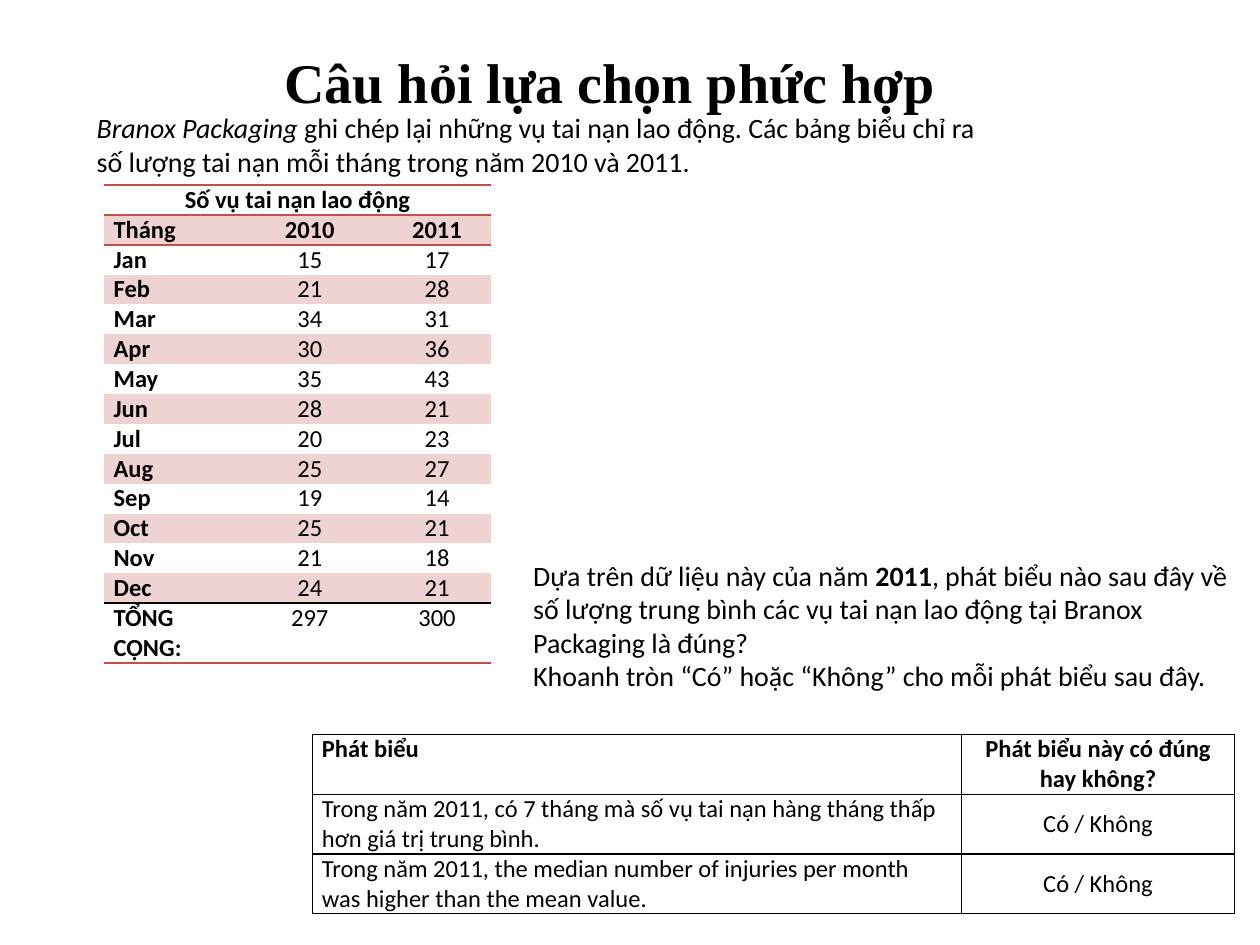
from dataclasses import dataclass
from lxml.etree import SubElement
from pptx import Presentation
from pptx.dml.color import RGBColor
from pptx.enum.text import MSO_ANCHOR, MSO_AUTO_SIZE, PP_ALIGN
from pptx.oxml.ns import qn
from pptx.util import Cm, Pt

HUES = {"ink": "000000", "red": "C0504D", "pink": "EFD3D2"}
PLAIN = "{2D5ABB26-0587-4C30-8999-92F81FD0307C}"


@dataclass
class Box:
    left: float
    top: float
    width: float
    height: float

    def cm(self) -> list[Cm]:
        return [Cm(v) for v in (self.left, self.top, self.width, self.height)]


@dataclass
class Run:
    text: str
    bold: bool = False
    slant: bool = False


@dataclass
class Note:
    box: Box
    anchor: MSO_ANCHOR
    lines: list[list[Run]]


@dataclass
class Grid:
    box: Box
    cols: list[float]
    row: float
    cells: list[list[str]]


def style(para, size: int, bold=None, face: str = "Calibri") -> None:
    para.font.name = face
    para.font.size = Pt(size)
    para.font.bold = bold
    para.font.color.rgb = RGBColor.from_string(HUES["ink"])


def write(cell, text: str, bold: bool, mid: bool) -> None:
    cell.margin_left = cell.margin_right = Cm(0.19)
    cell.margin_top = cell.margin_bottom = 0
    para = cell.text_frame.paragraphs[0]
    para.text = text
    para.alignment = PP_ALIGN.CENTER if mid else PP_ALIGN.LEFT
    style(para, 14, bold)


def edge(cell, sides: dict[str, str]) -> None:
    props = cell._tc.get_or_add_tcPr()
    spot = 0
    for side in "LRTB":
        if side in sides:
            line = SubElement(props, qn(f"a:ln{side}"), w=str(Pt(1)))
            fill = SubElement(line, qn("a:solidFill"))
            SubElement(fill, qn("a:srgbClr"), val=HUES[sides[side]])
            props.insert(spot, line)
            spot += 1


def add_grid(slide, grid: Grid):
    frame = slide.shapes.add_table(len(grid.cells), len(grid.cols), *grid.box.cm())
    table = frame.table
    table.first_row = table.horz_banding = False
    table._tbl.tblPr.find(qn("a:tableStyleId")).text = PLAIN
    for col, width in zip(table.columns, grid.cols):
        col.width = Cm(width)
    for row in table.rows:
        row.height = Cm(grid.row)
    frame.height = Cm(grid.box.height)
    return table


def add_counts(slide, grid: Grid) -> None:
    table = add_grid(slide, grid)
    last = len(grid.cells) - 1
    rules = {
        0: {"T": "red", "B": "red"},
        1: {"T": "red"},
        last - 1: {"B": "ink"},
        last: {"T": "ink", "B": "red"},
    }
    for r, row in enumerate(grid.cells):
        for c, text in enumerate(row):
            cell = table.cell(r, c)
            write(cell, text, r < 2 or c == 0, r == 0 or c > 0)
            if r % 2:
                cell.fill.solid()
                cell.fill.fore_color.rgb = RGBColor.from_string(HUES["pink"])
            else:
                cell.fill.background()
            edge(cell, rules.get(r, {}))
    table.cell(0, 0).merge(table.cell(0, 2))


def add_claims(slide, grid: Grid) -> None:
    table = add_grid(slide, grid)
    for r, row in enumerate(grid.cells):
        for c, text in enumerate(row):
            cell = table.cell(r, c)
            write(cell, text, r == 0, c == 1)
            if r and c:
                cell.vertical_anchor = MSO_ANCHOR.MIDDLE
            cell.fill.background()
            edge(cell, dict.fromkeys("LRTB", "ink"))


def add_note(slide, note: Note) -> None:
    frame = slide.shapes.add_textbox(*note.box.cm()).text_frame
    frame.word_wrap = True
    frame.auto_size = MSO_AUTO_SIZE.NONE
    frame.vertical_anchor = note.anchor
    for i, runs in enumerate(note.lines):
        para = frame.add_paragraph() if i else frame.paragraphs[0]
        style(para, 16)
        for part in runs:
            run = para.add_run()
            run.text = part.text
            run.font.bold = part.bold
            run.font.italic = part.slant


def add_title(slide, text: str, box: Box) -> None:
    title = slide.shapes.title
    title.left, title.top, title.width, title.height = box.cm()
    title.text_frame.vertical_anchor = MSO_ANCHOR.MIDDLE
    para = title.text_frame.paragraphs[0]
    para.text = text
    para.alignment = PP_ALIGN.CENTER
    style(para, 32, True, "Times New Roman")


MONTHS = "Jan Feb Mar Apr May Jun Jul Aug Sep Oct Nov Dec".split()
FIRST = [15, 21, 34, 30, 35, 28, 20, 25, 19, 25, 21, 24]
NEXT = [17, 28, 31, 36, 43, 21, 23, 27, 14, 21, 18, 21]

COUNTS = Grid(
    Box(2.1, 3.73, 7.8, 9.47), [2.67, 2.95, 2.18], 0.53,
    [["Số vụ tai nạn lao động", "", ""], ["Tháng", "2010", "2011"]]
    + [[m, str(a), str(b)] for m, a, b in zip(MONTHS, FIRST, NEXT)]
    + [["TỔNG CỘNG:", str(sum(FIRST)), str(sum(NEXT))]],
)

CLAIMS = Grid(
    Box(6.3, 14.81, 18.59, 3.56), [13.08, 5.51], 1.18,
    [
        ["Phát biểu", "Phát biểu này có đúng hay không?"],
        ["Trong năm 2011, có 7 tháng mà số vụ tai nạn hàng tháng thấp hơn giá trị trung bình.",
         "Có / Không"],
        ["Trong năm 2011, the median number of injuries per month was higher than the mean value.",
         "Có / Không"],
    ],
)

INTRO = Note(Box(1.7, 2.1, 18.75, 1.63), MSO_ANCHOR.MIDDLE, [[
    Run("Branox Packaging ", slant=True),
    Run("ghi chép lại những vụ tai nạn lao động. Các bảng biểu chỉ ra "
        "số lượng tai nạn mỗi tháng trong năm 2010 và 2011."),
]])

TASK = Note(Box(10.5, 11.13, 14.6, 3.68), MSO_ANCHOR.TOP, [
    [
        Run("Dựa trên dữ liệu này của năm "),
        Run("2011", bold=True),
        Run(", phát biểu nào sau đây về số lượng trung bình các vụ tai nạn "
            "lao động tại Branox Packaging là đúng?"),
    ],
    [Run("Khoanh tròn “Có” hoặc “Không” cho mỗi phát biểu sau đây.")],
])


def main() -> None:
    deck = Presentation()
    deck.slide_width, deck.slide_height = Cm(25.4), Cm(19.05)
    slide = deck.slides.add_slide(deck.slide_layouts[5])
    add_title(slide, "Câu hỏi lựa chọn phức hợp", Box(1.5, 0.53, 21.6, 2.2))
    add_counts(slide, COUNTS)
    add_note(slide, INTRO)
    add_claims(slide, CLAIMS)
    add_note(slide, TASK)
    deck.save("out.pptx")


if __name__ == "__main__":
    main()
